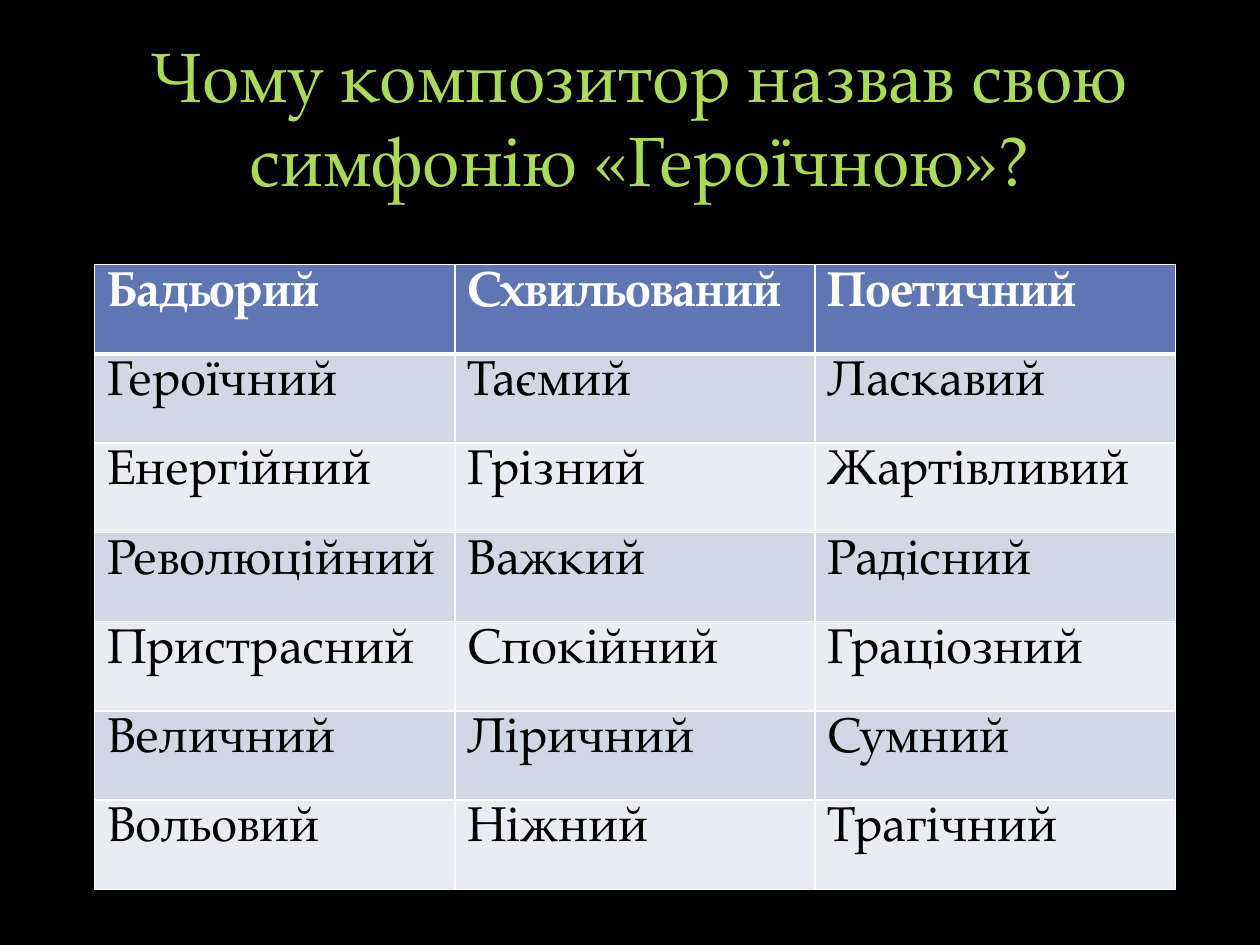
import pptx
import pptx.util
import pptx.dml.color
import pptx.enum.text
import pptx.oxml.ns
from lxml import etree
from pptx.util import Inches

FONT = "TeX Gyre Pagella"
COLORS = {
    "background": "000000",
    "title": "ABD958",
    "header": "6076B4",
    "odd": "D2D6E5",
    "even": "EAECF2",
    "white": "FFFFFF",
    "black": "000000",
}
ROWS = [
    ["Бадьорий", "Схвильований", "Поетичний"],
    ["Героїчний", "Таємий", "Ласкавий"],
    ["Енергійний", "Грізний", "Жартівливий"],
    ["Революційний", "Важкий", "Радісний"],
    ["Пристрасний", "Спокійний", "Граціозний"],
    ["Величний", "Ліричний", "Сумний"],
    ["Вольовий", "Ніжний", "Трагічний"],
]


def rgb(name):
    return pptx.dml.color.RGBColor.from_string(COLORS[name])


def add_run(p, text, size, color, bold=False):
    r = p.add_run()
    r.text = text
    r.font.name = FONT
    r.font.size = pptx.util.Pt(size)
    r.font.bold = bold
    r.font.color.rgb = rgb(color)


prs = pptx.Presentation()
prs.slide_width, prs.slide_height = Inches(10), Inches(7.5)
s = prs.slides.add_slide(prs.slide_layouts[5])
s.background.fill.solid()
s.background.fill.fore_color.rgb = rgb("background")

# Title
title = s.shapes.title
title.left, title.top = Inches(0.5), Inches(0.21)
title.width, title.height = Inches(9), Inches(1.7)
tf = title.text_frame
tf.word_wrap = True
tf.auto_size = pptx.enum.text.MSO_AUTO_SIZE.NONE
tf.vertical_anchor = pptx.enum.text.MSO_ANCHOR.TOP
p = tf.paragraphs[0]
p.alignment = pptx.enum.text.PP_ALIGN.CENTER
p.space_before = pptx.util.Pt(8)
p._p.get_or_add_pPr().set("marL", str(Inches(0.15)))
add_run(p, "Чому композитор назвав свою симфонію «Героїчною»?", 40, "title")

# Table of moods
table = s.shapes.add_table(
    len(ROWS), len(ROWS[0]), Inches(0.75), Inches(2.1), Inches(8.58), Inches(4.96)
).table
for i, words in enumerate(ROWS):
    is_header = i == 0
    fill = "header" if is_header else "odd" if i % 2 else "even"
    widths = {"L": 1, "R": 1, "T": 3 if i == 1 else 1, "B": 3 if is_header else 1}
    for j, word in enumerate(words):
        cell = table.cell(i, j)
        tcPr = cell._tc.get_or_add_tcPr()
        for side, width in widths.items():
            ln = etree.SubElement(tcPr, pptx.oxml.ns.qn(f"a:ln{side}"),
                                  w=str(pptx.util.Pt(width)))
            solid = etree.SubElement(ln, pptx.oxml.ns.qn("a:solidFill"))
            etree.SubElement(solid, pptx.oxml.ns.qn("a:srgbClr"), val=COLORS["white"])
        cell.fill.solid()
        cell.fill.fore_color.rgb = rgb(fill)
        add_run(cell.text_frame.paragraphs[0], word, 28,
                "white" if is_header else "black", is_header)

prs.save("out.pptx")
